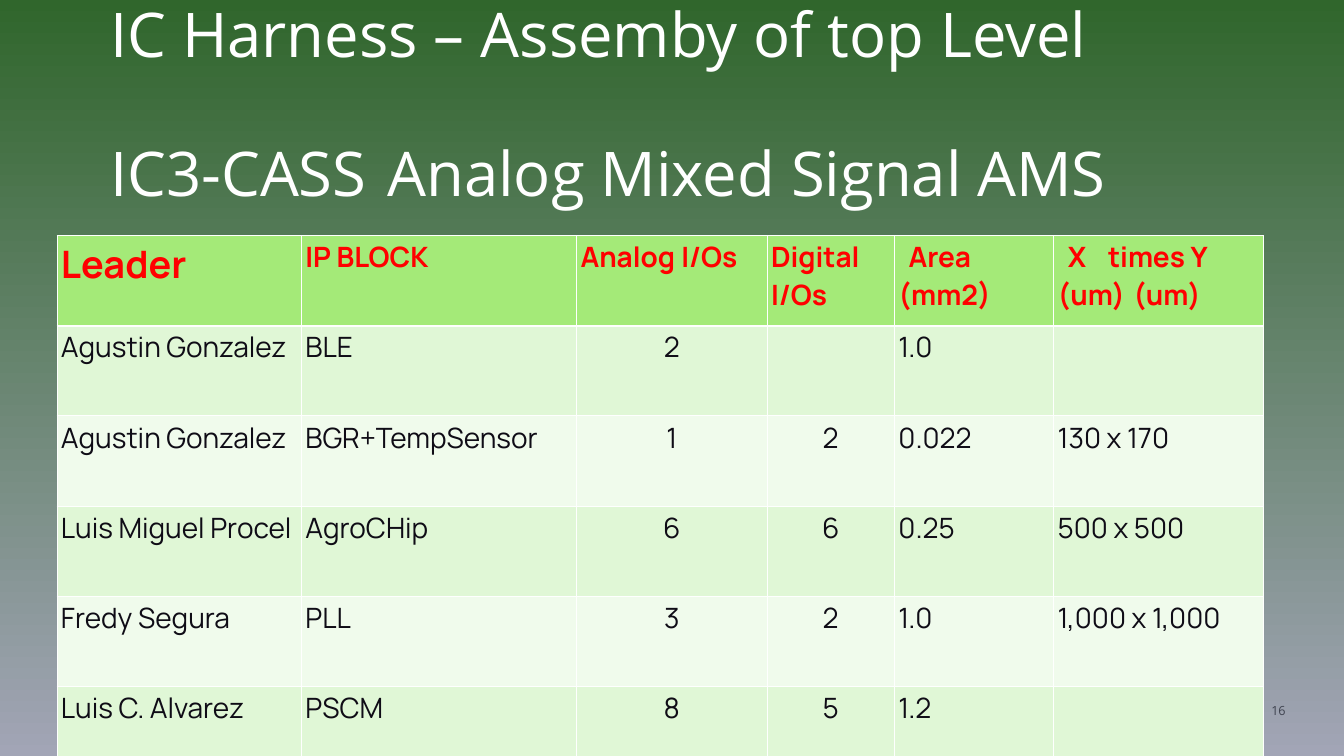
from lxml import etree
from pptx import Presentation
from pptx.dml.color import RGBColor
from pptx.enum.text import PP_ALIGN
from pptx.oxml.ns import qn
from pptx.util import Inches, Pt

CENTER = PP_ALIGN.CENTER
WHITE = RGBColor(0xFF, 0xFF, 0xFF)
GREEN = RGBColor(0x30, 0x66, 0x2C)
GRAY = RGBColor(0xA2, 0xA5, 0xB6)
SLATE = RGBColor(0x3E, 0x42, 0x4F)
RED = RGBColor(0xFF, 0x00, 0x00)
INK = RGBColor(0x0F, 0x0C, 0x16)
LIME = RGBColor(0xA4, 0xEA, 0x78)
BANDS = [RGBColor(0xE0, 0xF7, 0xD6), RGBColor(0xF0, 0xFB, 0xEC)]
RULE = RGBColor(0xFE, 0xFF, 0xFE)

COLS = [4.85, 5.46, 3.78, 2.53, 3.16, 4.16]
ROW = 1.79
NUMBER_COLS = (2, 3)
HEAD = ["Leader", "IP BLOCK", "Analog\tI/Os", "Digital I/Os",
        "Area (mm2)", "X\ttimes Y\n(um)\t(um)"]
BODY = [
    ["Agustin Gonzalez", "BLE", "2", "", "1.0", ""],
    ["Agustin Gonzalez", "BGR+TempSensor", "1", "2", "0.022", "130 x 170"],
    ["Luis Miguel Procel", "AgroCHip", "6", "6", "0.25", "500 x 500"],
    ["Fredy Segura", "PLL", "3", "2", "1.0", "1,000 x 1,000"],
    ["Luis C. Alvarez", "PSCM", "8", "5", "1.2", ""],
]


def style(para, face, size, color, bold=False):
    for run in para.runs:
        font = run.font
        font.name, font.size, font.bold = face, Pt(size), bold
        font.color.rgb = color


def set_tab(para, stop, indent=0):
    """Set one tab stop and a first-line indent, both in inches."""
    props = para._p.get_or_add_pPr()
    props.set("marL", "0")
    props.set("indent", str(Inches(indent)))
    if stop:
        tabs = etree.SubElement(props, qn("a:tabLst"))
        etree.SubElement(tabs, qn("a:tab"), pos=str(Inches(stop)), algn="l")


def set_border(cell, bottom):
    props = cell._tc.get_or_add_tcPr()
    sides = [("L", 1), ("R", 1), ("T", 1), ("B", bottom)]
    for spot, (side, width) in enumerate(sides):
        line = etree.Element(qn("a:ln" + side), w=str(Pt(width)))
        fill = etree.SubElement(line, qn("a:solidFill"))
        etree.SubElement(fill, qn("a:srgbClr"), val=str(RULE))
        props.insert(spot, line)


def add_box(slide, left, top, width, height, text):
    box = slide.shapes.add_textbox(
        Inches(left), Inches(top), Inches(width), Inches(height))
    frame = box.text_frame
    frame.word_wrap = True
    frame.margin_left = frame.margin_right = Inches(0.04)
    frame.margin_top = frame.margin_bottom = Inches(0.04)
    frame.text = text
    return frame


def add_title(slide, left, top, width, height):
    frame = add_box(slide, left, top, width, height,
                    "IC Harness – Assemby of top Level\n"
                    "IC3-CASS\tAnalog Mixed Signal AMS")
    frame.margin_top = Inches(0.1)
    first, second = frame.paragraphs
    for para in (first, second):
        para.line_spacing = 0.88
        style(para, "Open Sans", 88, WHITE)
    second.space_before = Pt(106)
    set_tab(second, 6.3)


def add_number(slide, left, top, width, height):
    para = add_box(slide, left, top, width, height, "16").paragraphs[0]
    para.alignment = CENTER
    style(para, "Open Sans", 18, SLATE)


def fill_cell(cell, text, fill, bottom=1):
    cell.margin_left = cell.margin_right = Inches(0.08)
    cell.margin_top = cell.margin_bottom = Inches(0.05)
    cell.text = text
    cell.fill.solid()
    cell.fill.fore_color.rgb = fill
    set_border(cell, bottom)
    return cell.text_frame.paragraphs


def add_blocks(slide, left, top):
    shape = slide.shapes.add_table(
        len(BODY) + 1, len(COLS), Inches(left), Inches(top),
        Inches(sum(COLS)), Inches(ROW * (len(BODY) + 1)))
    table = shape.table
    for col, width in zip(table.columns, COLS):
        col.width = Inches(width)
    for row in table.rows:
        row.height = Inches(ROW)

    for c, text in enumerate(HEAD):
        for para in fill_cell(table.cell(0, c), text, LIME, 3):
            style(para, "Manrope", 40 if c else 54, RED, True)
    set_tab(table.cell(0, 2).text_frame.paragraphs[0], 2.2)
    set_tab(table.cell(0, 4).text_frame.paragraphs[0], 0, 0.2)
    axes, units = table.cell(0, 5).text_frame.paragraphs
    set_tab(axes, 0.9, 0.2)
    set_tab(units, 2.12)

    for r, row in enumerate(BODY):
        for c, text in enumerate(row):
            para = fill_cell(table.cell(r + 1, c), text, BANDS[r % 2])[0]
            style(para, "Manrope", 40, INK)
            if c in NUMBER_COLS:
                para.alignment = CENTER


def paint_back(slide):
    fill = slide.background.fill
    fill.gradient()
    fill.gradient_angle = 270
    for stop, color in zip(fill.gradient_stops, (GREEN, GRAY)):
        stop.color.rgb = color


def main():
    deck = Presentation()
    deck.slide_width, deck.slide_height = Inches(26.67), Inches(15)
    slide = deck.slides.add_slide(deck.slide_layouts[6])
    paint_back(slide)
    add_title(slide, 2.15, 0, 23.65, 3.88)
    add_number(slide, 24.88, 13.9, 0.98, 0.53)
    add_blocks(slide, 1.13, 4.67)
    deck.save("out.pptx")


if __name__ == "__main__":
    main()
